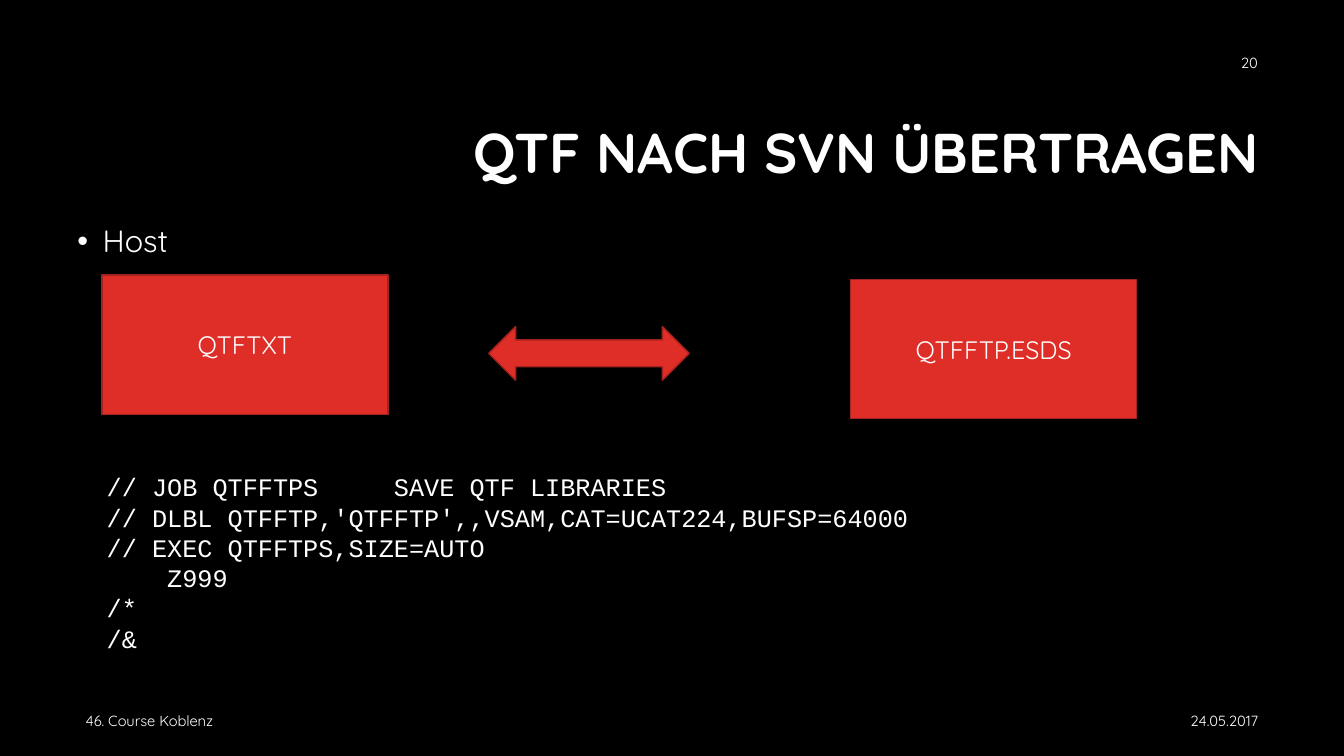
from dataclasses import dataclass

from lxml import etree
from pptx import Presentation
from pptx import util as u
from pptx.dml.color import RGBColor
from pptx.enum import shapes, text
from pptx.oxml.ns import qn

LEFT, CENTER, RIGHT = text.PP_ALIGN.LEFT, text.PP_ALIGN.CENTER, text.PP_ALIGN.RIGHT
TOP, MIDDLE = text.MSO_ANCHOR.TOP, text.MSO_ANCHOR.MIDDLE


@dataclass(frozen=True)
class Theme:
    background: RGBColor = RGBColor(0x00, 0x00, 0x00)
    ink: RGBColor = RGBColor(0xFF, 0xFF, 0xFF)
    accent: RGBColor = RGBColor(0xDF, 0x2E, 0x28)
    outline: RGBColor = RGBColor(0xA5, 0x22, 0x1E)
    font: str = "Quicksand"
    code_font: str = "Courier New"
    title_size: float = 40
    body_size: float = 22
    label_size: float = 18
    small_size: float = 10.5


class SlideBuilder:
    def __init__(self, slide, theme):
        self.slide = slide
        self.theme = theme
        slide.background.fill.solid()
        slide.background.fill.fore_color.rgb = theme.background

    def _style(self, paragraph, size, align=LEFT, font=None, bold=False):
        paragraph.alignment = align
        paragraph.font.size = u.Pt(size)
        paragraph.font.name = font or self.theme.font
        paragraph.font.bold = bold
        paragraph.font.color.rgb = self.theme.ink

    def _frame(self, box, anchor, wrap=True):
        frame = self.slide.shapes.add_textbox(*map(u.Cm, box)).text_frame
        frame.word_wrap = wrap
        frame.vertical_anchor = anchor
        return frame

    def title(self, box, wording):
        line = self._frame(box, MIDDLE).paragraphs[0]
        line.text = wording
        line.line_spacing = 0.9
        self._style(line, self.theme.title_size, RIGHT, bold=True)

    def bullet(self, box, wording):
        line = self._frame(box, TOP).paragraphs[0]
        line.text = wording
        line.line_spacing = 0.9
        properties = line._p.get_or_add_pPr()
        indent = u.Cm(0.64)
        properties.set("marL", str(indent))
        properties.set("indent", str(-indent))
        etree.SubElement(properties, qn("a:buFont"), typeface="Arial")
        etree.SubElement(properties, qn("a:buChar"), char="•")
        self._style(line, self.theme.body_size)

    def code(self, box, lines):
        frame = self._frame(box, TOP, wrap=False)
        frame.text = "\n".join(lines)
        for line in frame.paragraphs:
            self._style(line, self.theme.label_size, font=self.theme.code_font)

    def footer(self, box, wording, align):
        line = self._frame(box, MIDDLE).paragraphs[0]
        line.text = wording
        self._style(line, self.theme.small_size, align)

    def block(self, kind, box, label=""):
        """Draw a filled preset shape, with a centred label if given."""
        block = self.slide.shapes.add_shape(kind, *map(u.Cm, box))
        block.shadow.inherit = False
        block.fill.solid()
        block.fill.fore_color.rgb = self.theme.accent
        block.line.color.rgb = self.theme.outline
        block.line.width = u.Pt(1)
        if label:
            frame = block.text_frame
            frame.text = label
            frame.vertical_anchor = MIDDLE
            self._style(frame.paragraphs[0], self.theme.label_size, CENTER)


def main():
    deck = Presentation()
    deck.slide_width, deck.slide_height = u.Cm(33.87), u.Cm(19.05)
    builder = SlideBuilder(deck.slides.add_slide(deck.slide_layouts[6]), Theme())

    builder.title((8.05, 2.13, 23.93, 3.58), "QTF NACH SVN ÜBERTRAGEN")
    builder.bullet((1.7, 5.56, 30.71, 11.18), "Host")

    dataset_size = (7.21, 3.51)
    rectangle = shapes.MSO_SHAPE.RECTANGLE
    builder.block(rectangle, (2.57, 6.93, *dataset_size), "QTFTXT")
    builder.block(shapes.MSO_SHAPE.LEFT_RIGHT_ARROW, (12.32, 8.23, 5.05, 1.35))
    builder.block(rectangle, (21.44, 7.04, *dataset_size), "QTFFTP.ESDS")

    builder.code((2.44, 11.76, 21.18, 4.85), [
        "// JOB QTFFTPS     SAVE QTF LIBRARIES",
        "// DLBL QTFFTP,'QTFFTP',,VSAM,CAT=UCAT224,BUFSP=64000",
        "// EXEC QTFFTPS,SIZE=AUTO",
        "    Z999",
        "/*",
        "/&",
    ])

    builder.footer((23.88, 17.65, 8.08, 1.02), "24.05.2017", RIGHT)
    builder.footer((1.91, 17.65, 21.59, 1.02), "46. Course Koblenz", LEFT)
    builder.footer((24.33, 1.07, 7.62, 1.02), "20", RIGHT)

    deck.save("out.pptx")


if __name__ == "__main__":
    main()
